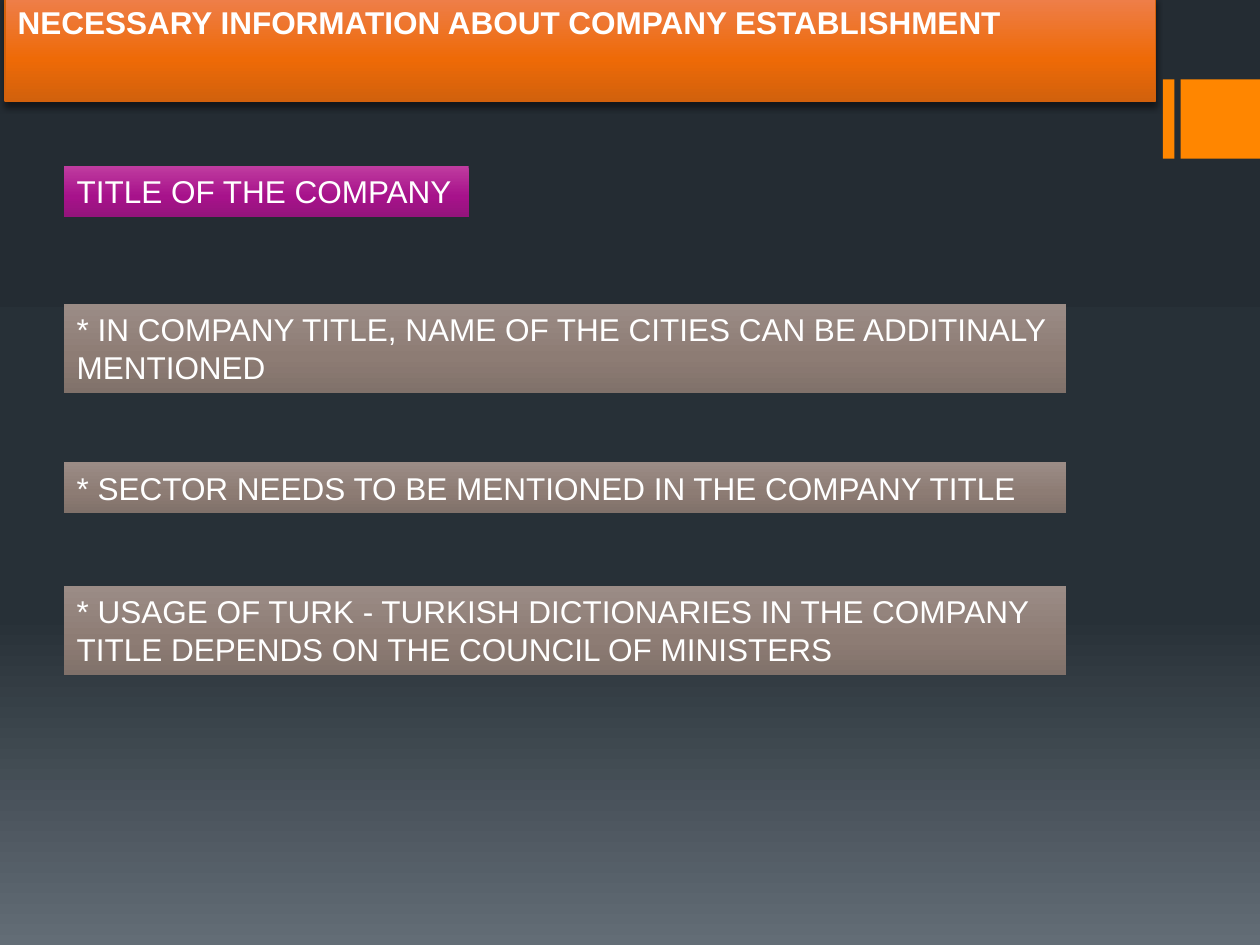
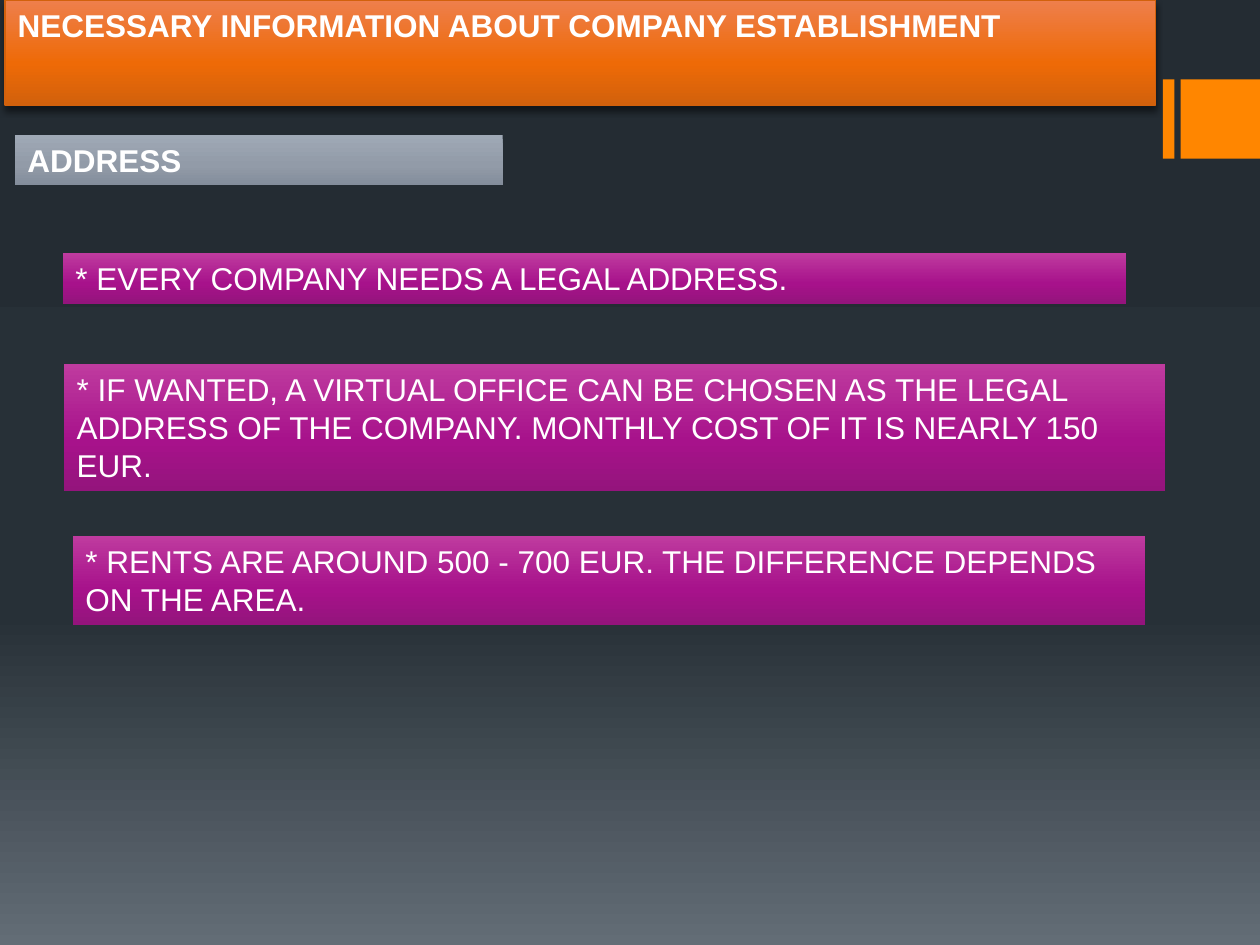
from lxml import etree
from pptx import Presentation
from pptx.dml.color import RGBColor
from pptx.enum import shapes, text
from pptx.oxml.ns import qn
from pptx.util import Inches, Pt

FONT, WHITE, MARK, BANNER_LINE = "Arial", "FFFFFF", "FF8600", "D2610C"
BOX_POSITIONS = (0, 60, 100)
BACKDROP = ("242C33", "273037", "636D76")
ORANGE = ("EE7F4C", "EE6A07", "D2610C")
PURPLE = ("BF3B9F", "A7128B", "94147C")
TAUPE = ("9B8C86", "8D7C74", "80716A")
SLATE = ("9FA9B6", "929BA8", "838D9B")
BANNER = "NECESSARY INFORMATION ABOUT COMPANY ESTABLISHMENT"


def rgb(value):
    return RGBColor.from_string(value)


def set_gradient(fill, owner, colors, positions=BOX_POSITIONS):
    """Fill from top to bottom; owner is the element that holds the fill."""
    fill.gradient()
    fill.gradient_angle = 270
    stops = owner.find(".//" + qn("a:gsLst"))
    for stop in list(stops):
        stops.remove(stop)
    for color, position in zip(colors, positions):
        stop = etree.SubElement(stops, qn("a:gs"), pos=str(position * 1000))
        etree.SubElement(stop, qn("a:srgbClr"), val=color)


def write(s, content, size=18, color=WHITE, bold=False, wrap=True):
    tf = s.text_frame
    tf.word_wrap = wrap
    tf.auto_size = text.MSO_AUTO_SIZE.SHAPE_TO_FIT_TEXT
    tf.vertical_anchor = text.MSO_ANCHOR.TOP
    p = tf.paragraphs[0]
    p.alignment = text.PP_ALIGN.LEFT
    r = p.add_run()
    r.text = content
    r.font.name, r.font.size, r.font.bold = FONT, Pt(size), bold
    r.font.color.rgb = rgb(color)


def add_rect(slide, box):
    s = slide.shapes.add_shape(shapes.MSO_SHAPE.RECTANGLE, *map(Inches, box))
    s.shadow.inherit = False
    s.line.fill.background()
    return s


def add_text_box(slide, box, content, colors, **style):
    s = add_rect(slide, box)
    set_gradient(s.fill, s.element.spPr, colors)
    write(s, content, **style)


def set_banner(slide, top):
    s = slide.shapes.title
    s.left, s.top, s.width, s.height = map(Inches, (0.04, top, 9.13, 0.4))
    set_gradient(s.fill, s.element.spPr, ORANGE)
    s.line.color.rgb, s.line.width = rgb(BANNER_LINE), Pt(1)
    s.shadow.inherit = False
    effects = s.element.spPr.find(qn("a:effectLst"))
    shadow = etree.SubElement(effects, qn("a:outerShdw"), blurRad=str(Pt(3.8)),
                              dist=str(Pt(3)), dir="5400000", rotWithShape="0")
    color = etree.SubElement(shadow, qn("a:srgbClr"), val="000000")
    etree.SubElement(color, qn("a:alpha"), val="48000")
    write(s, BANNER, bold=True)


def set_template(prs, layout, slide):
    """Give the master its backdrop and the layout its orange marks."""
    master = prs.slide_master
    set_gradient(master.background.fill, master.element.cSld, BACKDROP, (0, 65, 100))
    for number, (left, width) in enumerate(((9.23, 0.09), (9.37, 0.63))):
        s = add_rect(slide, (left, 0.63, width, 0.63))
        s.fill.solid()
        s.fill.fore_color.rgb = rgb(MARK)
        s.element.nvSpPr.cNvPr.set("id", str(100 + number))
        layout.shapes.element.append(s.element)


def fill_title_slide(slide):
    set_banner(slide, -0.03)
    add_text_box(slide, (0.51, 1.32, 3.21, 0.4), "TITLE OF THE COMPANY", PURPLE, wrap=False)
    rules = (
        (2.41, 0.71, "* IN COMPANY TITLE, NAME OF THE CITIES CAN BE ADDITINALY MENTIONED"),
        (3.67, 0.4, "* SECTOR NEEDS TO BE MENTIONED IN THE COMPANY TITLE"),
        (4.65, 0.71, "* USAGE OF TURK - TURKISH DICTIONARIES IN THE COMPANY TITLE "
                     "DEPENDS ON THE COUNCIL OF MINISTERS"),
    )
    for top, height, content in rules:
        add_text_box(slide, (0.51, top, 7.95, height), content, TAUPE)


def fill_address_slide(slide):
    set_banner(slide, 0)
    add_text_box(slide, (0.12, 1.07, 3.87, 0.4), "ADDRESS", SLATE, bold=True)
    facts = (
        ((0.5, 2.01, 8.44, 0.4), "* EVERY COMPANY NEEDS A LEGAL ADDRESS."),
        ((0.51, 2.89, 8.74, 1.01),
         "* IF WANTED, A VIRTUAL OFFICE CAN BE CHOSEN AS THE LEGAL ADDRESS OF THE "
         "COMPANY. MONTHLY COST OF IT IS NEARLY 150 EUR."),
        ((0.58, 4.25, 8.51, 0.71),
         "* RENTS ARE AROUND 500 - 700 EUR. THE DIFFERENCE DEPENDS ON THE AREA."),
    )
    for box, content in facts:
        add_text_box(slide, box, content, PURPLE)


def main():
    prs = Presentation()
    prs.slide_width, prs.slide_height = Inches(10), Inches(7.5)
    layout = prs.slide_layouts.get_by_name("Title Only")
    title_slide, address_slide = (prs.slides.add_slide(layout) for _ in range(2))
    set_template(prs, layout, title_slide)
    fill_title_slide(title_slide)
    fill_address_slide(address_slide)
    prs.save("out.pptx")


if __name__ == "__main__":
    main()
